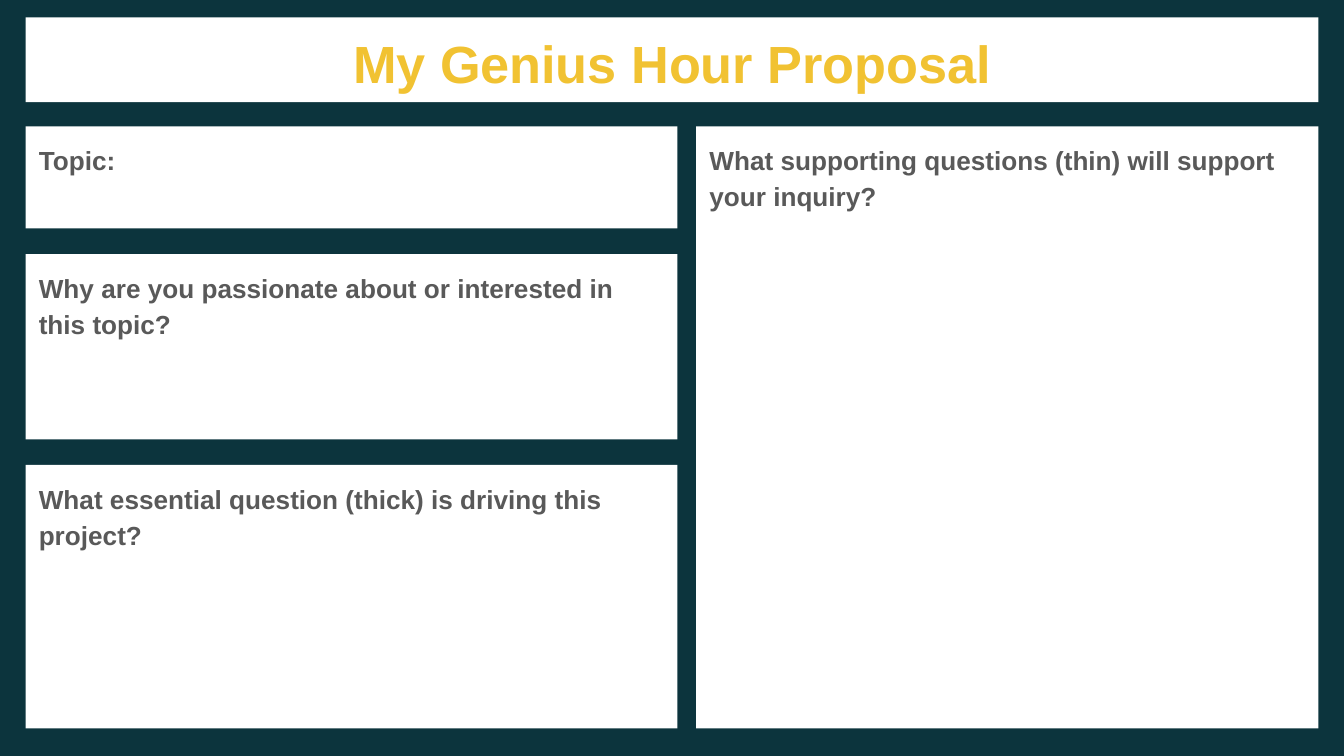
from pptx import Presentation
from pptx.util import Inches, Pt
from pptx.dml.color import RGBColor as RGB
from pptx.enum.shapes import MSO_SHAPE as Shape
from pptx.enum.text import MSO_ANCHOR as Anchor, PP_ALIGN as Align


def paint(fill, color):
    """Give a fill one solid colour from a hex string."""
    fill.solid()
    fill.fore_color.rgb = RGB.from_string(color)


def panel(x, y, w, h, text, size, color, align, space):
    """Add a white box, in inches, with one bold paragraph at its top."""
    box = slide.shapes.add_shape(
        Shape.RECTANGLE, Inches(x), Inches(y), Inches(w), Inches(h))
    box.shadow.inherit = False
    paint(box.fill, "FFFFFF")
    box.line.fill.background()
    frame = box.text_frame
    frame.word_wrap = True
    frame.vertical_anchor = Anchor.TOP
    frame.margin_left = frame.margin_right = Inches(0.1)
    frame.margin_top = frame.margin_bottom = Inches(0.1)
    frame.text = text
    para = frame.paragraphs[0]
    para.alignment = align
    para.line_spacing = space
    font = para.runs[0].font
    font.name, font.size, font.bold = "Arial", Pt(size), True
    paint(font.fill, color)


deck = Presentation()
deck.slide_width = Inches(10)
deck.slide_height = deck.slide_width * 9 // 16
slide = deck.slides.add_slide(deck.slide_layouts[6])
paint(slide.background.fill, "0C343D")

left, top, gap = 0.19, 0.94, 0.19
wide, slim = 4.85, 4.63
right = left + wide + 0.14

panel(left, 0.13, right + slim - left, 0.63,
      "My Genius Hour Proposal", 28, "F1C232", Align.CENTER, 1.0)

body = (14, "595959", Align.LEFT, 1.15)
rows = [
    (0.76, "Topic:"),
    (1.38, "Why are you passionate about or interested in this topic?"),
    (1.96, "What essential question (thick) is driving this project?"),
]
y = top
for high, text in rows:
    panel(left, y, wide, high, text, *body)
    y += high + gap

panel(right, top, slim, y - gap - top,
      "What supporting questions (thin) will support your inquiry?", *body)

deck.save("out.pptx")
